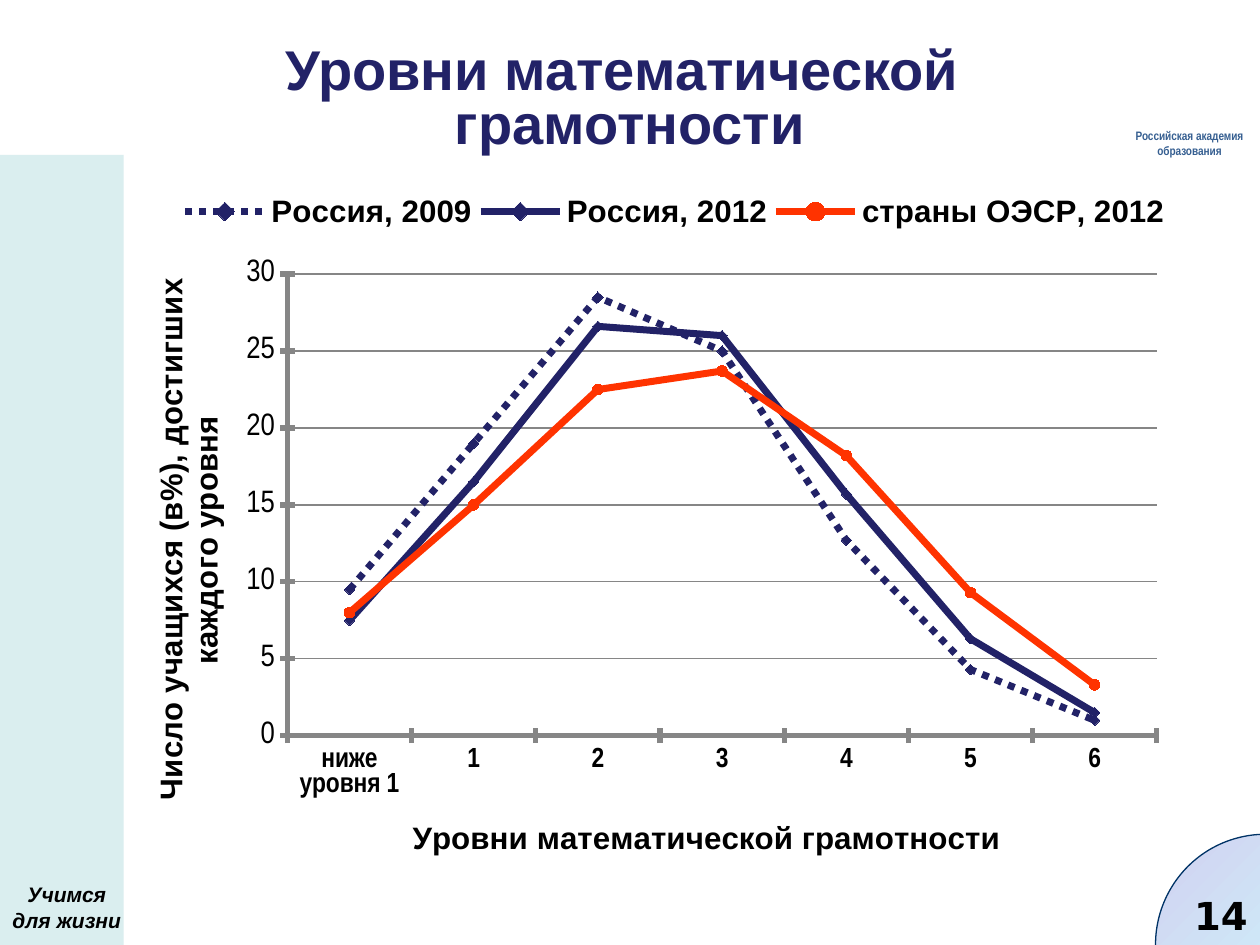
from lxml import etree
from pptx import Presentation
from pptx.chart.data import CategoryChartData
from pptx.dml.color import RGBColor
from pptx.enum.chart import XL_CHART_TYPE, XL_LEGEND_POSITION, XL_MARKER_STYLE, XL_TICK_MARK
from pptx.enum.dml import MSO_LINE
from pptx.enum.shapes import MSO_SHAPE
from pptx.enum.text import MSO_ANCHOR, PP_ALIGN
from pptx.oxml.ns import qn
from pptx.util import Pt

CENTER, RIGHT = PP_ALIGN.CENTER, PP_ALIGN.RIGHT
MIDDLE = MSO_ANCHOR.MIDDLE
RECTANGLE, OVAL = MSO_SHAPE.RECTANGLE, MSO_SHAPE.OVAL
LINE_MARKERS = XL_CHART_TYPE.LINE_MARKERS
LEGEND_TOP = XL_LEGEND_POSITION.TOP
TICK_CROSS = XL_TICK_MARK.CROSS
DIAMOND, CIRCLE = XL_MARKER_STYLE.DIAMOND, XL_MARKER_STYLE.CIRCLE
DOTTED, SOLID = MSO_LINE.ROUND_DOT, MSO_LINE.SOLID

NAVY, ORANGE, GREY, BLACK = "222267", "FF3300", "868686", "000000"

LEVELS = ["ниже уровня 1", "1", "2", "3", "4", "5", "6"]
# Name, shares, line colour, dash, marker, marker colour
SERIES = [
    ("Россия, 2009", (9.5, 19, 28.5, 25, 12.7, 4.3, 1), NAVY, DOTTED, DIAMOND, NAVY),
    ("Россия, 2012", (7.5, 16.5, 26.6, 26, 15.7, 6.3, 1.5), NAVY, SOLID, DIAMOND, NAVY),
    ("страны ОЭСР, 2012", (8, 15, 22.5, 23.7, 18.2, 9.3, 3.3), ORANGE, SOLID, CIRCLE, ORANGE),
]


def rgb(code):
    return RGBColor.from_string(code)


def set_font(font, size, name="Arial", color=BLACK, bold=True, italic=False):
    font.name, font.size = name, Pt(size)
    font.bold, font.italic = bold, italic
    font.color.rgb = rgb(color)


def place(shape, left, top, width, height):
    shape.left, shape.top = Pt(left), Pt(top)
    shape.width, shape.height = Pt(width), Pt(height)


def add_label(slide, box, text, align, insets=(7.2, 3.6, 7.2, 3.6), wrap=True, **font):
    label = slide.shapes.add_textbox(*map(Pt, box))
    frame = label.text_frame
    frame.word_wrap = wrap
    (frame.margin_left, frame.margin_top,
     frame.margin_right, frame.margin_bottom) = map(Pt, insets)
    frame.text = text
    paragraph = frame.paragraphs[0]
    paragraph.alignment = align
    set_font(paragraph.runs[0].font, **font)


def add_panel(slide, preset, box):
    panel = slide.shapes.add_shape(preset, *map(Pt, box))
    panel.shadow.inherit = False
    return panel


def add_sidebar(slide):
    sidebar = add_panel(slide, RECTANGLE, (0, 88.5, 70.6, 451.5))
    sidebar.fill.solid()
    sidebar.fill.fore_color.rgb = rgb("BBE0E3")
    color = sidebar.fill._xPr.find(".//" + qn("a:srgbClr"))
    etree.SubElement(color, qn("a:alpha"), val="54000")
    sidebar.line.fill.background()


def add_corner(slide):
    corner = add_panel(slide, OVAL, (660.3, 476.7, 126, 126))
    corner.fill.gradient()
    corner.fill.gradient_angle = 315
    for stop, code in zip(corner.fill.gradient_stops, ("D1D1F0", "CCFFFF")):
        stop.color.rgb = rgb(code)
    corner.line.color.rgb = rgb("003366")
    corner.line.width = Pt(0.75)


def add_title(slide, text):
    title = slide.shapes.title
    place(title, 36, 21.6, 648, 72.7)
    frame = title.text_frame
    frame.vertical_anchor = MIDDLE
    frame.text = text
    paragraph = frame.paragraphs[0]
    paragraph.alignment = CENTER
    paragraph.line_spacing = 0.8
    for run in paragraph.runs:
        set_font(run.font, 32, color=NAVY)


def set_layout(element, index, inner=False, **fractions):
    """Fix the position of a chart part, in fractions of the chart."""
    for old in element.findall(qn("c:layout")):
        element.remove(old)
    layout = etree.Element(qn("c:layout"))
    manual = etree.SubElement(layout, qn("c:manualLayout"))
    if inner:
        etree.SubElement(manual, qn("c:layoutTarget"), val="inner")
    for key in ("x", "y"):
        etree.SubElement(manual, qn(f"c:{key}Mode"), val="edge")
    for key, value in fractions.items():
        etree.SubElement(manual, qn(f"c:{key}"), val=str(value))
    element.insert(index, layout)


def format_axis(axis, title, x, y, size, bold):
    frame = axis.axis_title.text_frame
    frame.text = title
    set_font(frame.paragraphs[0].runs[0].font, 17.9)
    set_layout(axis.axis_title._element, 1, x=x, y=y)
    set_font(axis.tick_labels.font, size, name="Arial Narrow", bold=bold)
    axis.major_tick_mark = TICK_CROSS
    axis.format.line.color.rgb = rgb(GREY)
    axis.format.line.width = Pt(3)


def add_level_chart(slide):
    data = CategoryChartData()
    data.categories = LEVELS
    for name, shares, *_ in SERIES:
        data.add_series(name, shares)
    box = map(Pt, (69.8, 99.4, 625.7, 395.3))
    chart = slide.shapes.add_chart(LINE_MARKERS, *box, data).chart
    set_font(chart.font, 17.9, bold=False)
    chart.has_title = False

    # Legend above the plot
    chart.has_legend = True
    chart.legend.position = LEGEND_TOP
    chart.legend.include_in_layout = False
    set_font(chart.legend.font, 17.9)
    set_layout(chart.legend._element, 1, x=0.05, y=0.01, w=0.91, h=0.09)

    # Plot and axes
    plot_area = chart._chartSpace.find(".//" + qn("c:plotArea"))
    set_layout(plot_area, 0, inner=True, x=0.151, y=0.146, w=0.794, h=0.673)
    format_axis(chart.category_axis, "Уровни математической грамотности",
                0.26, 0.93, 15.9, True)
    shares_axis = chart.value_axis
    format_axis(shares_axis, "Число учащихся (в%), достигших каждого уровня",
                0.02, 0.15, 17.9, False)
    shares_axis.minimum_scale, shares_axis.maximum_scale = 0, 30
    shares_axis.major_unit = 5
    shares_axis.has_major_gridlines = True
    gridline = shares_axis.major_gridlines.format.line
    gridline.color.rgb = rgb(GREY)
    gridline.width = Pt(0.75)

    # Series
    chart.plots[0].vary_by_categories = False
    for series, (_, _, color, dash, marker, marker_color) in zip(chart.plots[0].series, SERIES):
        series.smooth = False
        line = series.format.line
        line.color.rgb = rgb(color)
        line.width = Pt(4)
        line.dash_style = dash
        series.marker.style, series.marker.size = marker, 6
        series.marker.format.fill.solid()
        series.marker.format.fill.fore_color.rgb = rgb(marker_color)
        series.marker.format.line.color.rgb = rgb(marker_color)


def main():
    prs = Presentation()
    prs.slide_width, prs.slide_height = Pt(720), Pt(540)
    slide = prs.slides.add_slide(prs.slide_layouts[5])

    # Side band, motto and page corner
    add_sidebar(slide)
    add_label(slide, (0, 500.4, 76.3, 36.7), "Учимся для жизни", CENTER,
              insets=(5.8, 3.6, 5.8, 3.6), size=12, italic=True)
    add_corner(slide)
    add_label(slide, (661.7, 506.2, 58.3, 33.8), "14", RIGHT, wrap=False,
              size=22, name="DejaVu Sans")

    # Content
    add_title(slide, "Уровни математической \vграмотности")
    add_level_chart(slide)
    add_label(slide, (643.7, 69.8, 69.1, 18.7), "Российская академия образования",
              CENTER, insets=(4.3, 3.6, 1.4, 3.6), size=7, name="Arial Narrow",
              color="365F91")
    prs.save("out.pptx")


if __name__ == "__main__":
    main()
